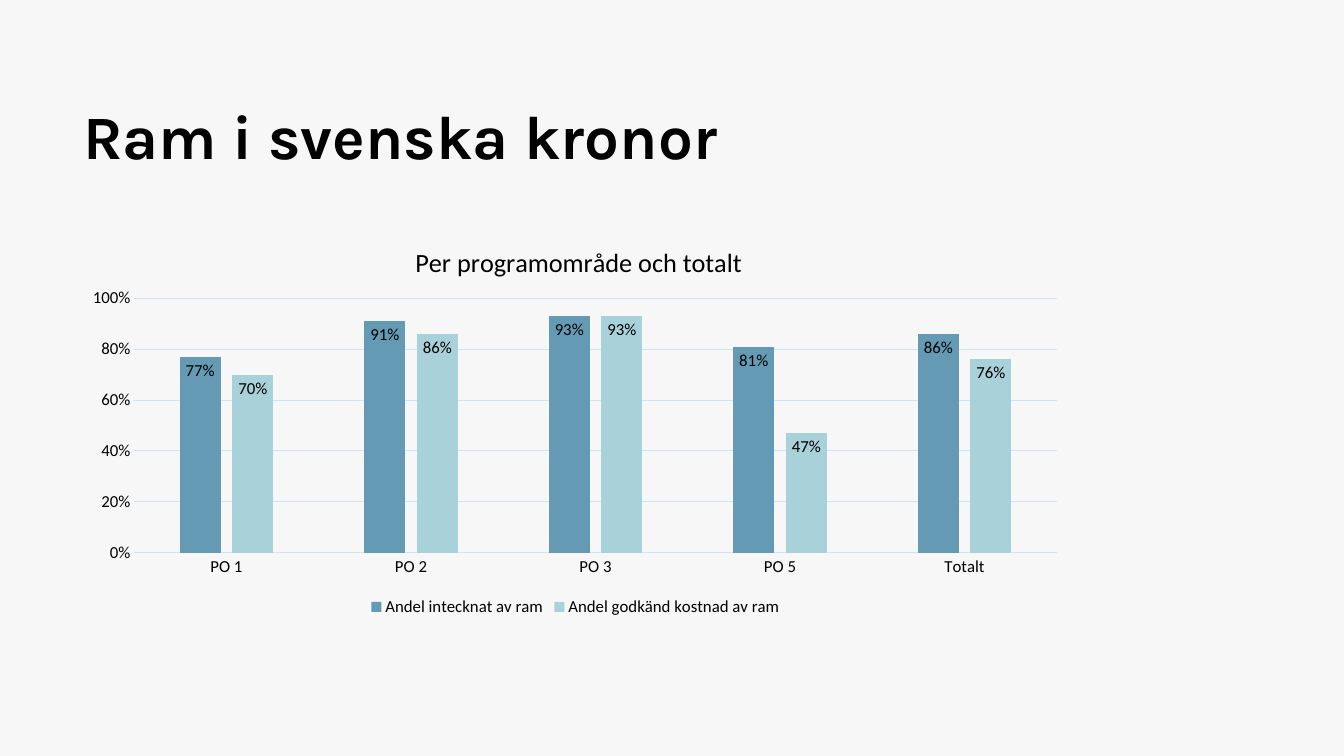
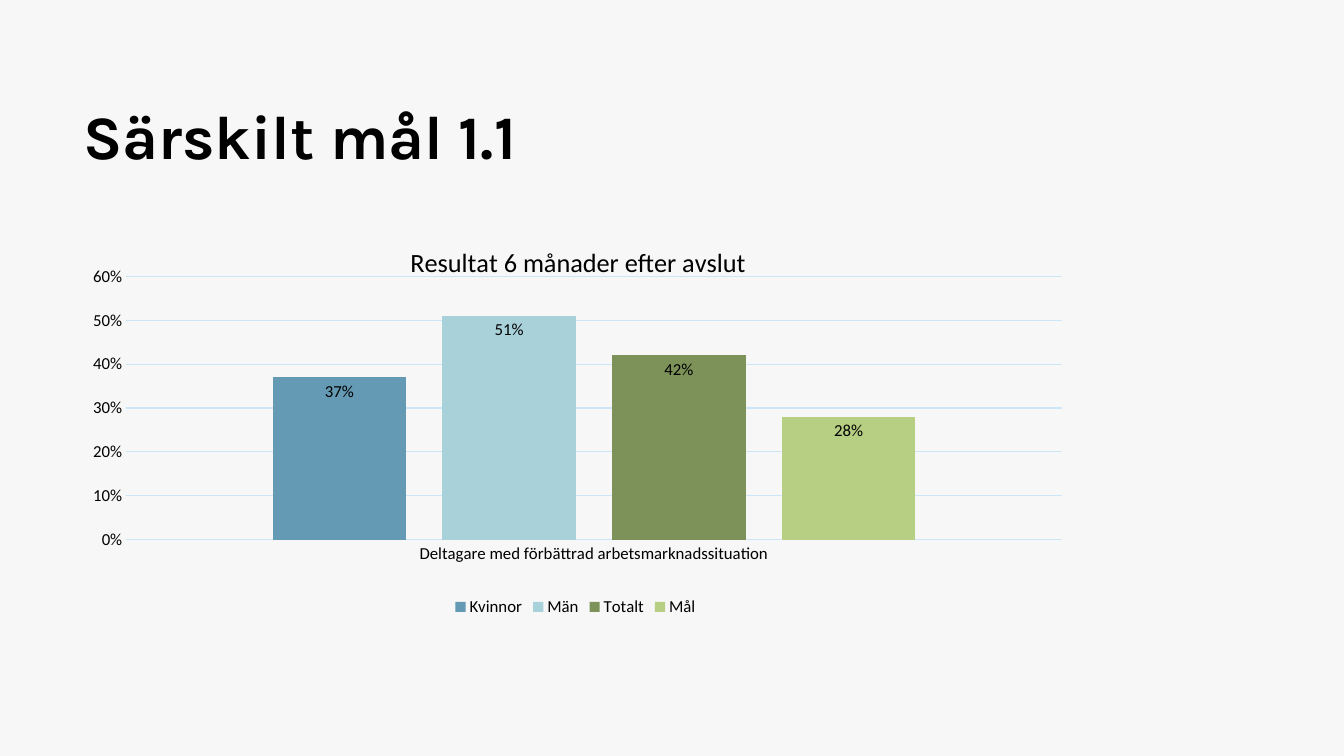
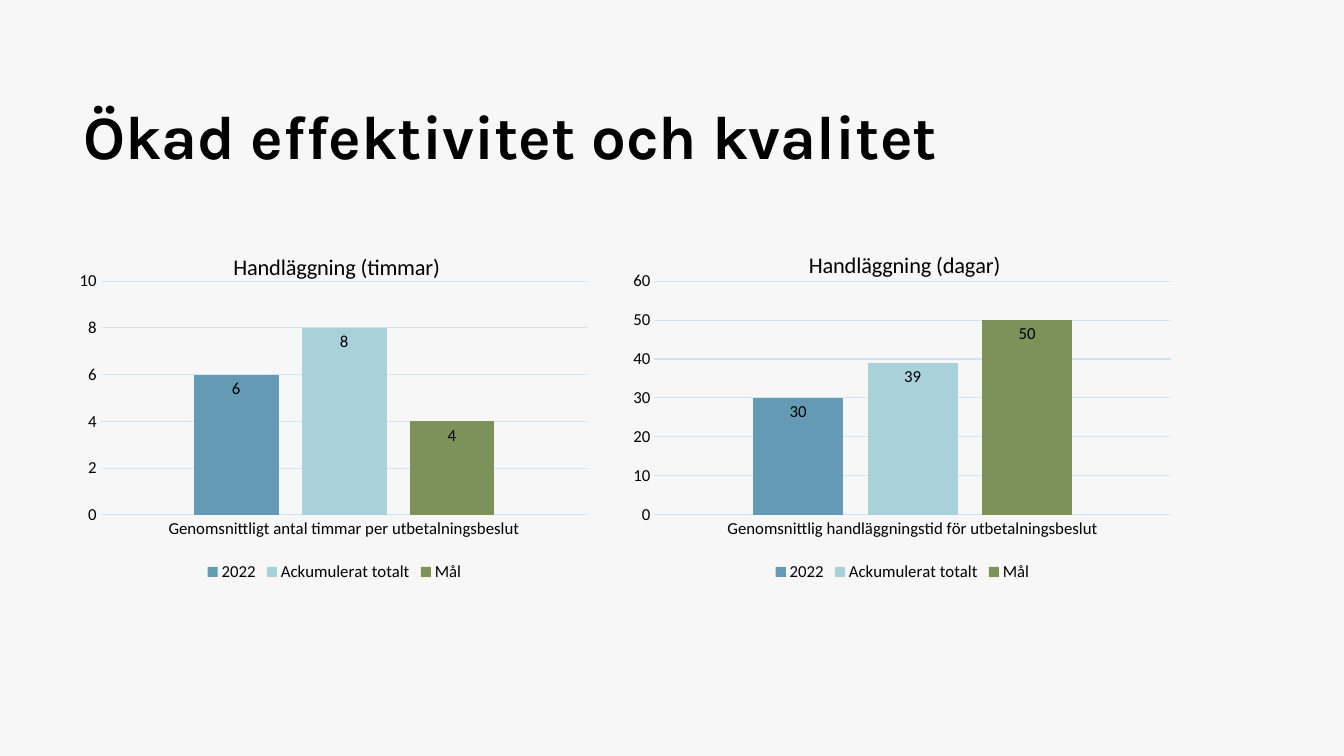
from lxml import etree
from pptx import Presentation
from pptx.chart.data import CategoryChartData
from pptx.dml.color import RGBColor
from pptx.enum.chart import XL_CHART_TYPE, XL_LABEL_POSITION, XL_LEGEND_POSITION, XL_TICK_MARK
from pptx.enum.text import MSO_ANCHOR, MSO_AUTO_SIZE, PP_ALIGN
from pptx.oxml.ns import qn
from pptx.util import Pt

PX = 914400 / 100.8
COLORS = {"background": "F8F7F7", "text": "000000", "grid": "CCE6F7"}
SERIES_COLORS = ["649AB3", "A9D1DA", "7C9259", "B7CF83"]
TITLE_BOX = {"left": 73, "top": 62, "width": 1005, "height": 146}
WIDE_BOX = (73, 219, 1005, 402)
INNER_PLOT = {"x": 0.053, "y": 0.146, "w": 0.931, "h": 0.655}

SLIDES = [
    ("Ram i svenska kronor", [{
        "box": WIDE_BOX,
        "heading": "Per programområde och totalt", "size": 18.8,
        "heading_at": {"x": 0.336, "y": 0.05},
        "plot": {"x": 0.061, "y": 0.197, "w": 0.918, "h": 0.634},
        "categories": ["PO 1", "PO 2", "PO 3", "PO 5", "Totalt"],
        "series": {"Andel intecknat av ram": [0.77, 0.91, 0.93, 0.81, 0.86],
                   "Andel godkänd kostnad av ram": [0.7, 0.86, 0.93, 0.47, 0.76]},
        "format": "0%", "maximum": 1, "step": 0.2,
    }]),
    ("Särskilt mål 1.1", [{
        "box": WIDE_BOX,
        "heading": "Resultat 6 månader efter avslut", "size": 18.8,
        "heading_at": {"x": 0.331, "y": 0.05},
        "plot": {**INNER_PLOT, "y": 0.143},
        "categories": ["Deltagare med förbättrad arbetsmarknadssituation"],
        "series": {"Kvinnor": [0.37], "Män": [0.51], "Totalt": [0.42], "Mål": [0.28]},
        "format": "0%", "maximum": 0.6, "step": 0.1,
    }]),
    ("Ökad effektivitet och kvalitet", [{
        "box": (73, 229, 523, 357),
        "heading": "Handläggning (timmar)", "size": 16,
        "heading_at": {"x": 0.299, "y": 0.053},
        "plot": INNER_PLOT,
        "categories": ["Genomsnittligt antal timmar per utbetalningsbeslut"],
        "series": {"2022": [6], "Ackumulerat totalt": [8], "Mål": [4]},
        "format": "0", "maximum": 10, "step": 2,
    }, {
        "box": (625, 229, 555, 357),
        "heading": "Handläggning (dagar)", "size": 16,
        "heading_at": {"x": 0.324, "y": 0.047},
        "plot": INNER_PLOT,
        "categories": ["Genomsnittlig handläggningstid för utbetalningsbeslut"],
        "series": {"2022": [30], "Ackumulerat totalt": [39], "Mål": [50]},
        "format": "0", "maximum": 60, "step": 10,
    }]),
]


def style_font(font, size, name="Calibri", bold=False):
    for attribute, value in {"size": Pt(size), "name": name, "bold": bold}.items():
        setattr(font, attribute, value)
    font.color.rgb = RGBColor.from_string(COLORS["text"])


def set_layout(parent, index, fractions, inner=False):
    """Give a chart part a manual place, in fractions of the chart."""
    for old in parent.findall(qn("c:layout")):
        parent.remove(old)
    layout = etree.Element(qn("c:layout"))
    manual = etree.SubElement(layout, qn("c:manualLayout"))
    settings = {"layoutTarget": "inner"} if inner else {}
    settings.update({"xMode": "edge", "yMode": "edge"}, **fractions)
    for tag, value in settings.items():
        etree.SubElement(manual, qn(f"c:{tag}")).set("val", str(value))
    parent.insert(index, layout)


prs = Presentation()
prs.slide_width, prs.slide_height = round(1344 * PX), round(756 * PX)
background = prs.slide_master.background.fill
background.solid()
background.fore_color.rgb = RGBColor.from_string(COLORS["background"])

for title_text, charts in SLIDES:
    slide = prs.slides.add_slide(prs.slide_layouts[5])
    title = slide.shapes.title
    for side, length in TITLE_BOX.items():
        setattr(title, side, round(length * PX))
    frame = title.text_frame
    frame.text = title_text
    frame.word_wrap = True
    frame.auto_size = MSO_AUTO_SIZE.NONE
    frame.vertical_anchor = MSO_ANCHOR.MIDDLE
    frame.paragraphs[0].alignment = PP_ALIGN.LEFT
    style_font(frame.paragraphs[0].runs[0].font, 44, "Karla", True)

    for content in charts:
        data = CategoryChartData(number_format=content["format"])
        data.categories = content["categories"]
        for name, values in content["series"].items():
            data.add_series(name, values)
        box = [round(length * PX) for length in content["box"]]
        chart = slide.shapes.add_chart(XL_CHART_TYPE.COLUMN_CLUSTERED, *box, data).chart
        style_font(chart.font, 12)

        chart.has_title = True
        heading = chart.chart_title.text_frame
        heading.text = content["heading"]
        style_font(heading.paragraphs[0].runs[0].font, content["size"])
        chart.chart_title.include_in_layout = False
        set_layout(chart.chart_title._element, 1, content["heading_at"])

        plot = chart.plots[0]
        plot.gap_width, plot.overlap, plot.vary_by_categories = 219, -27, False
        set_layout(plot._element.getparent(), 0, content["plot"], inner=True)
        for series, color in zip(plot.series, SERIES_COLORS):
            series.format.fill.solid()
            series.format.fill.fore_color.rgb = RGBColor.from_string(color)
            labels = series.data_labels
            label_format = {"show_value": True, "position": XL_LABEL_POSITION.INSIDE_END,
                            "number_format": content["format"],
                            "number_format_is_linked": False}
            for attribute, value in label_format.items():
                setattr(labels, attribute, value)
            style_font(labels.font, 12)

        value_axis, category_axis = chart.value_axis, chart.category_axis
        scale = {"minimum_scale": 0, "maximum_scale": content["maximum"],
                 "major_unit": content["step"], "has_major_gridlines": True}
        for attribute, value in scale.items():
            setattr(value_axis, attribute, value)
        value_axis.tick_labels.number_format = content["format"]
        value_axis.tick_labels.number_format_is_linked = False
        for axis in (value_axis, category_axis):
            axis.major_tick_mark = axis.minor_tick_mark = XL_TICK_MARK.NONE
            style_font(axis.tick_labels.font, 12)
        value_axis.format.line.fill.background()
        for line in (value_axis.major_gridlines.format.line, category_axis.format.line):
            line.width = Pt(0.75)
            line.color.rgb = RGBColor.from_string(COLORS["grid"])

        chart.has_legend = True
        chart.legend.position = XL_LEGEND_POSITION.BOTTOM
        chart.legend.include_in_layout = False
        style_font(chart.legend.font, 12)

prs.save("out.pptx")
